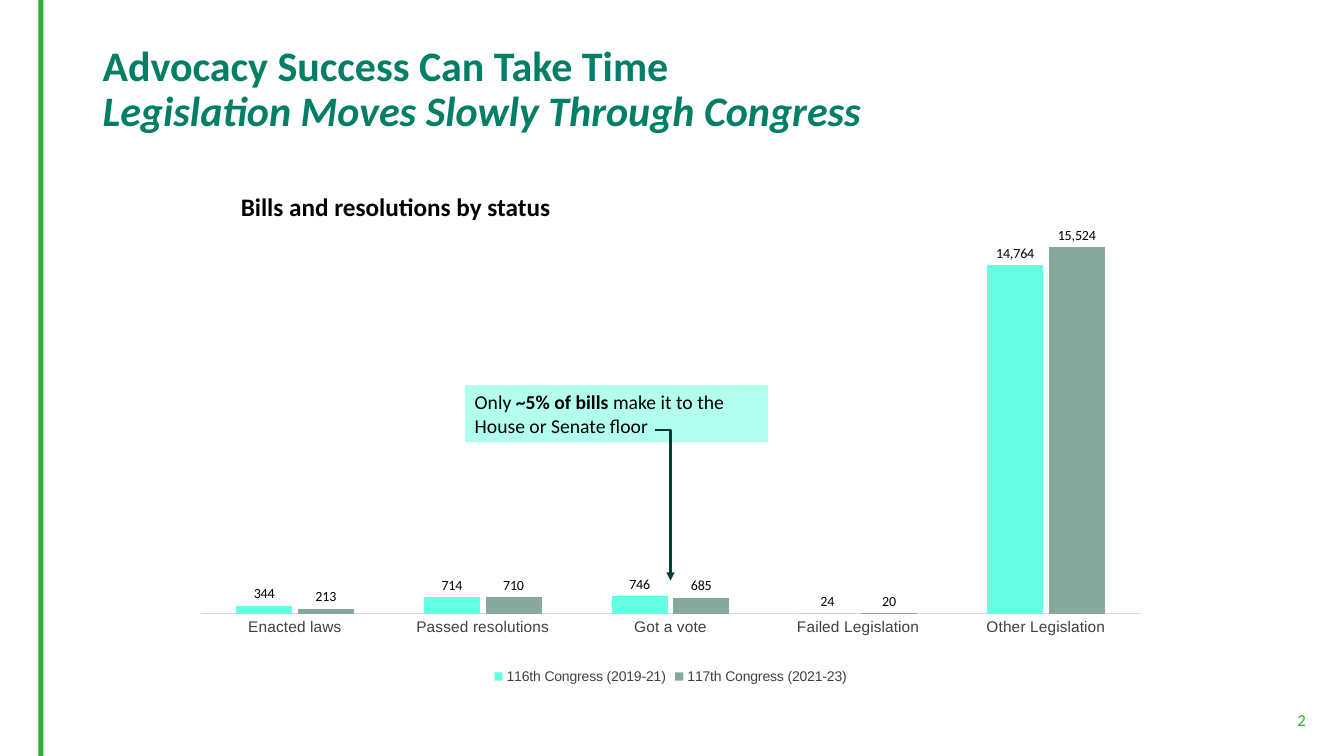
from lxml import etree
from pptx import Presentation
from pptx import util as u
from pptx.chart.data import CategoryChartData
from pptx.dml.color import RGBColor
from pptx.enum import chart as ch, shapes, text
from pptx.oxml.ns import qn

COLORS = {
    "bar": "2EB135", "title": "007E66", "black": "000000", "axis": "D9D9D9",
    "label": "404040", "mint": "65FFE2", "sage": "87A89C",
    "callout": "B2FFF0", "arrow": "003F33",
}


def rgb(name):
    return RGBColor.from_string(COLORS[name])


class SlideBuilder:
    """Holds the style and the current slide."""

    def __init__(self, slide, body_font="Calibri", chart_font="Arial"):
        self.slide = slide
        self.body_font = body_font
        self.chart_font = chart_font

    def box(self, at):
        return [u.Inches(n) for n in at]

    def set_font(self, font, size, color, name=None, bold=None):
        font.name = name or self.body_font
        font.size = u.Pt(size)
        font.color.rgb = rgb(color)
        font.bold = bold

    def fill_text(self, sp, runs, size, color, bold=None,
                  align=text.PP_ALIGN.LEFT, anchor=text.MSO_ANCHOR.TOP):
        """Fill one paragraph from (text, format) pairs; None is a line break."""
        tf = sp.text_frame
        tf.word_wrap = True
        tf.vertical_anchor = anchor
        p = tf.paragraphs[0]
        p.alignment = align
        self.set_font(p.font, size, color, bold=bold)
        for run in runs:
            if run is None:
                p.add_line_break()
                continue
            r = p.add_run()
            r.text, style = run
            if style == "bold":
                r.font.bold = True
            elif style == "italic":
                r.font.italic = True
        return p

    def text(self, at, runs, size, color, **options):
        sp = self.slide.shapes.add_textbox(*self.box(at))
        return self.fill_text(sp, runs, size, color, **options)

    def rect(self, at, fill):
        sp = self.slide.shapes.add_shape(shapes.MSO_SHAPE.RECTANGLE, *self.box(at))
        sp.shadow.inherit = False
        sp.fill.solid()
        sp.fill.fore_color.rgb = rgb(fill)
        sp.line.fill.background()
        return sp

    def elbow_arrow(self, ends, color, width):
        cx = self.slide.shapes.add_connector(
            shapes.MSO_CONNECTOR.ELBOW, *self.box(ends))
        cx.line.color.rgb = rgb(color)
        cx.line.width = u.Pt(width)
        sp_pr = cx._element.spPr
        sp_pr.find(qn("a:prstGeom")).set("prst", "bentConnector2")
        etree.SubElement(sp_pr.find(qn("a:ln")), qn("a:tailEnd"), type="triangle")
        etree.SubElement(sp_pr, qn("a:effectLst"))

    def column_chart(self, at, categories, series, plot_area, top):
        data = CategoryChartData(number_format="#,##0")
        data.categories = categories
        for name, values, _ in series:
            data.add_series(name, values)
        chart = self.slide.shapes.add_chart(
            ch.XL_CHART_TYPE.COLUMN_CLUSTERED, *self.box(at), data).chart
        self.set_font(chart.font, 10, "black", self.chart_font)
        chart.has_title = False

        # Legend
        chart.has_legend = True
        chart.legend.position = ch.XL_LEGEND_POSITION.BOTTOM
        chart.legend.include_in_layout = False
        self.set_font(chart.legend.font, 10, "label", self.chart_font)

        # Axes
        cat_axis, val_axis = chart.category_axis, chart.value_axis
        cat_axis.major_tick_mark = ch.XL_TICK_MARK.NONE
        cat_axis.format.line.color.rgb = rgb("axis")
        cat_axis.format.line.width = u.Pt(0.75)
        self.set_font(cat_axis.tick_labels.font, 11, "label", self.chart_font)
        val_axis.visible = False
        val_axis.has_major_gridlines = False
        val_axis.minimum_scale = 0
        val_axis.maximum_scale = top

        # Columns and their labels
        plot = chart.plots[0]
        plot.vary_by_categories = False
        plot.gap_width = 125
        plot.overlap = -10
        for column, (_, _, color) in zip(plot.series, series):
            column.format.fill.solid()
            column.format.fill.fore_color.rgb = rgb(color)
            labels = column.data_labels
            labels.show_value = True
            labels.position = ch.XL_LABEL_POSITION.OUTSIDE_END
            labels.number_format = "#,##0"
            labels.number_format_is_linked = False
            self.set_font(labels.font, 10, "black", bold=False)
        self.place_plot(chart, plot_area)

    def place_plot(self, chart, plot_area):
        area = chart._chartSpace.find(".//" + qn("c:plotArea"))
        for old in area.findall(qn("c:layout")):
            area.remove(old)
        layout = etree.Element(qn("c:layout"))
        manual = etree.SubElement(layout, qn("c:manualLayout"))
        settings = [("layoutTarget", "inner"), ("xMode", "edge"), ("yMode", "edge")]
        for tag, value in settings + list(zip("xywh", plot_area)):
            etree.SubElement(manual, qn("c:" + tag), val=str(value))
        area.insert(0, layout)


def main():
    prs = Presentation()
    prs.slide_width, prs.slide_height = u.Inches(13.33), u.Inches(7.5)
    s = SlideBuilder(prs.slides.add_slide(prs.slide_layouts[6]))

    # Side bar, title and slide number
    s.rect((0.38, 0, 0.05, 7.5), "bar")
    p = s.text((0.92, 0.4, 11.5, 1),
               [("Advocacy Success Can Take Time", None), None,
                ("Legislation Moves Slowly Through Congress", "italic")],
               30, "title", bold=True, anchor=text.MSO_ANCHOR.MIDDLE)
    p.line_spacing = 0.9
    s.text((9.57, 6.99, 3.48, 0.3), [("2", None)], 12, "bar",
           align=text.PP_ALIGN.RIGHT, anchor=text.MSO_ANCHOR.BOTTOM)

    # Chart and its heading
    s.column_chart(
        (1.99, 1.56, 9.32, 5.27),
        ["Enacted laws", "Passed resolutions", "Got a vote",
         "Failed Legislation", "Other Legislation"],
        [("116th Congress (2019-21)", (344, 714, 746, 24, 14764), "mint"),
         ("117th Congress (2021-23)", (213, 710, 685, 20, 15524), "sage")],
        plot_area=(0, 0.06, 1, 0.8), top=18000)
    s.text((2.29, 1.85, 7.17, 0.34),
           [("Bills and resolutions by status", None)], 18, "black", bold=True)

    # Callout with arrow
    callout = s.rect((4.61, 3.82, 3.01, 0.57), "callout")
    s.fill_text(callout,
                [("Only ", None), ("~5% of bills ", "bold"),
                 ("make it to the House or Senate floor", None)], 14, "black")
    s.elbow_arrow((6.5, 4.27, 6.65, 5.76), "arrow", 1.5)

    prs.save("out.pptx")


if __name__ == "__main__":
    main()
